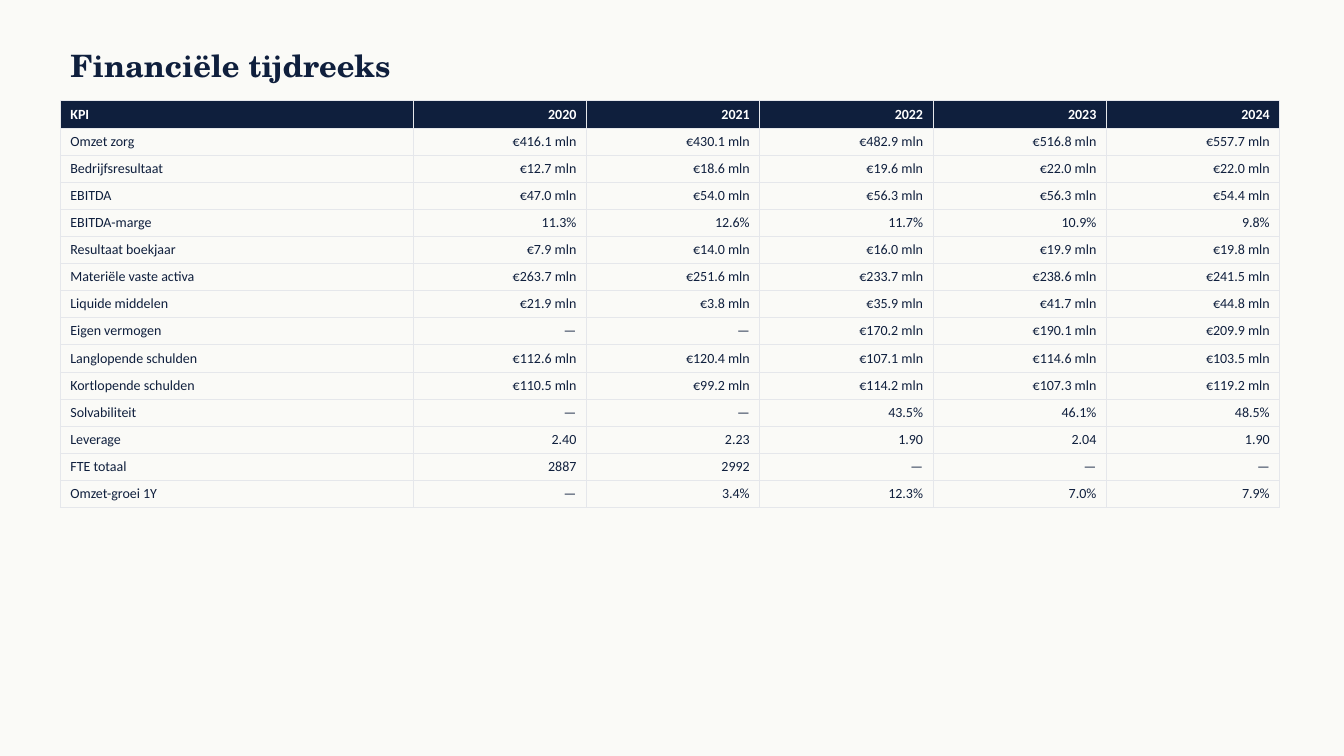
from lxml import etree
from pptx import Presentation
from pptx.dml.color import RGBColor
from pptx.enum.text import MSO_ANCHOR, MSO_AUTO_SIZE, PP_ALIGN
from pptx.oxml.ns import qn
from pptx.util import Cm, Pt

LEFT = PP_ALIGN.LEFT
RIGHT = PP_ALIGN.RIGHT
MIDDLE = MSO_ANCHOR.MIDDLE
NO_AUTOFIT = MSO_AUTO_SIZE.NONE

TITLE_ONLY_LAYOUT = 5
NAVY = "0F1F3D"
WHITE = "FFFFFF"
PAPER = "FAFAF7"
GRID = "E5E7EB"
TITLE_FONT = "TeX Gyre Schola"
BODY_FONT = "Calibri"

KPI_WIDTH = 8.89
ROW_HEIGHT = 0.68
HEADER = ("KPI", "2020", "2021", "2022", "2023", "2024")
KPIS = [
    ("Omzet zorg", "€416.1 mln", "€430.1 mln", "€482.9 mln", "€516.8 mln", "€557.7 mln"),
    ("Bedrijfsresultaat", "€12.7 mln", "€18.6 mln", "€19.6 mln", "€22.0 mln", "€22.0 mln"),
    ("EBITDA", "€47.0 mln", "€54.0 mln", "€56.3 mln", "€56.3 mln", "€54.4 mln"),
    ("EBITDA-marge", "11.3%", "12.6%", "11.7%", "10.9%", "9.8%"),
    ("Resultaat boekjaar", "€7.9 mln", "€14.0 mln", "€16.0 mln", "€19.9 mln", "€19.8 mln"),
    ("Materiële vaste activa", "€263.7 mln", "€251.6 mln", "€233.7 mln", "€238.6 mln", "€241.5 mln"),
    ("Liquide middelen", "€21.9 mln", "€3.8 mln", "€35.9 mln", "€41.7 mln", "€44.8 mln"),
    ("Eigen vermogen", "—", "—", "€170.2 mln", "€190.1 mln", "€209.9 mln"),
    ("Langlopende schulden", "€112.6 mln", "€120.4 mln", "€107.1 mln", "€114.6 mln", "€103.5 mln"),
    ("Kortlopende schulden", "€110.5 mln", "€99.2 mln", "€114.2 mln", "€107.3 mln", "€119.2 mln"),
    ("Solvabiliteit", "—", "—", "43.5%", "46.1%", "48.5%"),
    ("Leverage", "2.40", "2.23", "1.90", "2.04", "1.90"),
    ("FTE totaal", "2887", "2992", "—", "—", "—"),
    ("Omzet-groei 1Y", "—", "3.4%", "12.3%", "7.0%", "7.9%"),
]


def color(hex_string):
    return RGBColor.from_string(hex_string)


def add_text(paragraph, text, font_name, size, hex_string, bold, alignment):
    paragraph.alignment = alignment
    run = paragraph.add_run()
    run.text = text
    run.font.name = font_name
    run.font.size = Pt(size)
    run.font.bold = bold
    run.font.color.rgb = color(hex_string)


def add_borders(cell, hex_string, width):
    properties = cell._tc.get_or_add_tcPr()
    for side in ("a:lnL", "a:lnR", "a:lnT", "a:lnB"):
        line = etree.SubElement(properties, qn(side), w=str(Pt(width)))
        fill = etree.SubElement(line, qn("a:solidFill"))
        etree.SubElement(fill, qn("a:srgbClr"), val=hex_string)


def place_title(slide, left, top, width, height):
    title = slide.shapes.title
    title.left, title.top = Cm(left), Cm(top)
    title.width, title.height = Cm(width), Cm(height)
    frame = title.text_frame
    frame.word_wrap = True
    frame.auto_size = NO_AUTOFIT
    frame.vertical_anchor = MIDDLE
    add_text(frame.paragraphs[0], "Financiële tijdreeks", TITLE_FONT, 22, NAVY, True, LEFT)


def fill_cell(cell, text, is_header, alignment):
    add_borders(cell, GRID, 0.5)
    if is_header:
        cell.fill.solid()
        cell.fill.fore_color.rgb = color(NAVY)
    else:
        cell.fill.background()
    text_color = WHITE if is_header else NAVY
    add_text(cell.text_frame.paragraphs[0], text, BODY_FONT, 10, text_color, is_header, alignment)


def place_kpi_table(slide, left, top, width):
    rows = [HEADER] + KPIS
    shape = slide.shapes.add_table(
        len(rows), len(HEADER), Cm(left), Cm(top), Cm(width), Cm(ROW_HEIGHT * len(rows)))
    table = shape.table
    table.horz_banding = False
    year_width = (width - KPI_WIDTH) / (len(HEADER) - 1)
    for index, column in enumerate(table.columns):
        column.width = Cm(year_width if index else KPI_WIDTH)
    for row_index, values in enumerate(rows):
        table.rows[row_index].height = Cm(ROW_HEIGHT)
        for column_index, value in enumerate(values):
            alignment = RIGHT if column_index else LEFT
            fill_cell(table.cell(row_index, column_index), value, row_index == 0, alignment)


def build_time_series_slide(presentation):
    slide = presentation.slides.add_slide(presentation.slide_layouts[TITLE_ONLY_LAYOUT])
    slide.background.fill.solid()
    slide.background.fill.fore_color.rgb = color(PAPER)
    place_title(slide, 1.52, 1.02, 30.48, 1.27)
    place_kpi_table(slide, 1.52, 2.54, 30.73)


def main():
    presentation = Presentation()
    presentation.slide_width = Cm(33.87)
    presentation.slide_height = Cm(19.05)
    build_time_series_slide(presentation)
    presentation.save("out.pptx")


if __name__ == "__main__":
    main()
